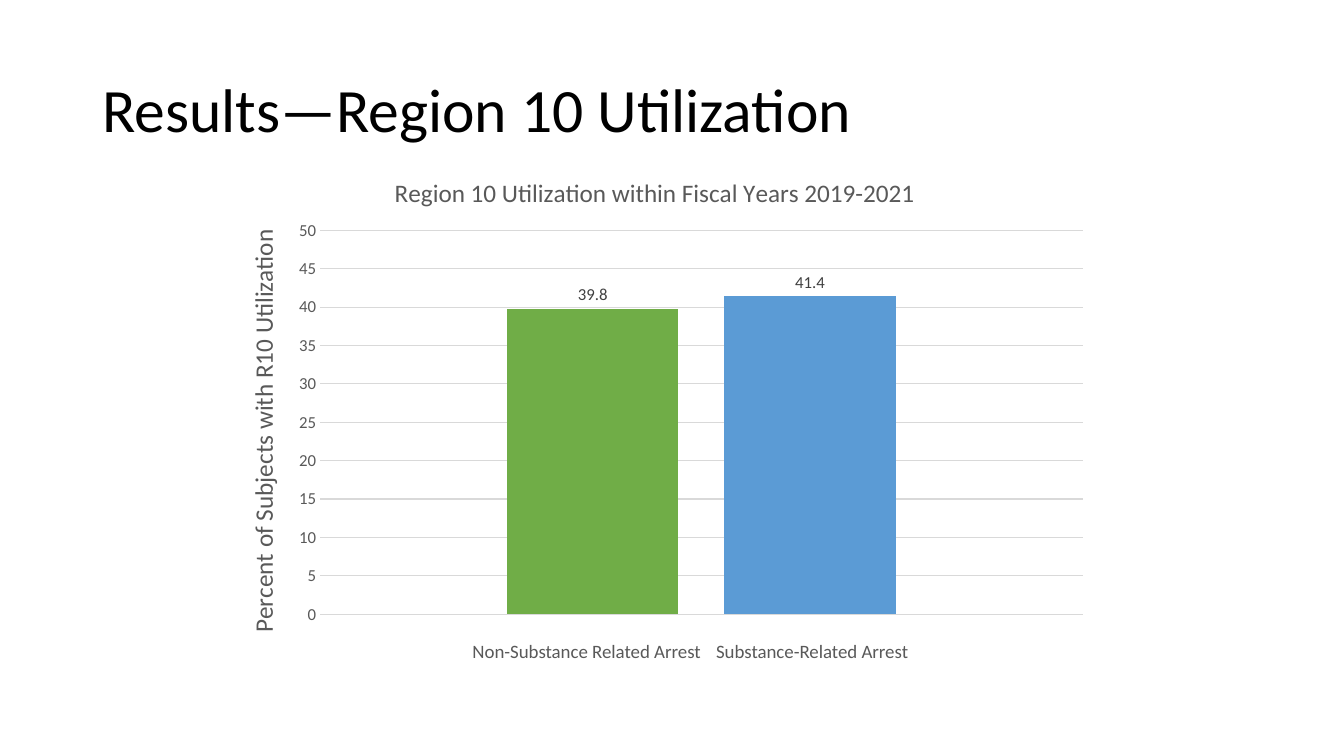
from dataclasses import dataclass

from lxml import etree
from pptx import Presentation
from pptx.chart.data import CategoryChartData
from pptx.dml.color import RGBColor
from pptx.enum.chart import XL_CHART_TYPE, XL_LABEL_POSITION, XL_TICK_MARK
from pptx.enum.text import MSO_ANCHOR, MSO_AUTO_SIZE, PP_ALIGN
from pptx.oxml.ns import qn
from pptx.util import Pt

COLUMNS = XL_CHART_TYPE.COLUMN_CLUSTERED
OUTSIDE_END = XL_LABEL_POSITION.OUTSIDE_END
NO_TICK = XL_TICK_MARK.NONE
MIDDLE = MSO_ANCHOR.MIDDLE
NO_AUTOFIT = MSO_AUTO_SIZE.NONE
LEFT = PP_ALIGN.LEFT
TITLE_ONLY = 5
PX = 9525


@dataclass(frozen=True)
class Theme:
    font: str = "Calibri"
    ink: str = "000000"
    muted: str = "595959"
    value: str = "404040"
    grid: str = "D9D9D9"
    heading_size: float = 44
    chart_title_size: float = 18
    caption_size: float = 13.5
    label_size: float = 12


THEME = Theme()
ARRESTS = [
    ("Non-Substance Related Arrest", 39.8, "70AD47", 237, 228),
    ("Substance-Related Arrest", 41.4, "5B9BD5", 469, 200),
]


def apply_format(target, values):
    for name, value in values.items():
        setattr(target, name, value)


def style_font(font, size, color):
    apply_format(font, {"name": THEME.font, "size": Pt(size), "bold": False})
    font.color.rgb = RGBColor.from_string(color)


def place(part, box):
    apply_format(part, dict(zip(("left", "top", "width", "height"), (n * PX for n in box))))


def set_layout(element, **positions):
    layout = element.find(qn("c:layout"))
    if layout is None:
        layout = etree.Element(qn("c:layout"))
        anchor = element.find(qn("c:tx"))
        if anchor is None:
            element.insert(0, layout)
        else:
            anchor.addnext(layout)
    for child in list(layout):
        layout.remove(child)
    manual = etree.SubElement(layout, qn("c:manualLayout"))
    for tag, value in positions.items():
        etree.SubElement(manual, qn(f"c:{tag}")).set("val", str(value))


def write_chart_title(title, wording, x, y):
    frame = title.text_frame
    frame.text = wording
    style_font(frame.paragraphs[0].runs[0].font, THEME.chart_title_size, THEME.muted)
    set_layout(title._element, xMode="edge", yMode="edge", x=x, y=y)


def add_heading(slide, box):
    heading = slide.shapes.title
    place(heading, box)
    frame = heading.text_frame
    frame.text = "Results—Region 10 Utilization"
    apply_format(frame, {"vertical_anchor": MIDDLE, "auto_size": NO_AUTOFIT, "word_wrap": True})
    paragraph = frame.paragraphs[0]
    apply_format(paragraph, {"alignment": LEFT, "line_spacing": 0.9})
    style_font(paragraph.runs[0].font, THEME.heading_size, THEME.ink)


def style_axes(chart):
    chart.category_axis.visible = False
    percent = chart.value_axis
    apply_format(percent, {
        "minimum_scale": 0, "maximum_scale": 50, "major_unit": 5,
        "major_tick_mark": NO_TICK, "minor_tick_mark": NO_TICK,
        "has_major_gridlines": True,
    })
    percent.format.line.fill.background()
    gridline = percent.major_gridlines.format.line
    gridline.width = Pt(0.75)
    gridline.color.rgb = RGBColor.from_string(THEME.grid)
    style_font(percent.tick_labels.font, THEME.label_size, THEME.muted)
    write_chart_title(percent.axis_title, "Percent of Subjects with R10 Utilization", 0.02, 0.15)


def add_utilization_chart(slide, box):
    utilization = CategoryChartData()
    utilization.categories = ["1"]
    for arrest, percent, *_ in ARRESTS:
        utilization.add_series(arrest, [percent])
    chart = slide.shapes.add_chart(COLUMNS, *(n * PX for n in box), utilization).chart
    style_font(chart.font, 10, THEME.ink)
    apply_format(chart, {"has_legend": False, "has_title": True})
    write_chart_title(chart.chart_title, "Region 10 Utilization within Fiscal Years 2019-2021", 0.19, 0.05)
    style_axes(chart)
    columns = chart.plots[0]
    apply_format(columns, {"gap_width": 219, "overlap": -27, "vary_by_categories": False})
    for series, (_, _, color, _, _) in zip(columns.series, ARRESTS):
        series.format.fill.solid()
        series.format.fill.fore_color.rgb = RGBColor.from_string(color)
        labels = series.data_labels
        apply_format(labels, {"show_value": True, "position": OUTSIDE_END})
        style_font(labels.font, THEME.label_size, THEME.value)
    plot_area = chart._chartSpace.chart.plotArea
    set_layout(plot_area, layoutTarget="inner", xMode="edge", yMode="edge",
               x=0.11, y=0.16, w=0.87, h=0.71)


def add_arrest_captions(slide, box):
    left, top, _, _ = box
    for arrest, _, _, offset, width in ARRESTS:
        caption_box = (left + offset, top + 468, width, 30)
        caption = slide.shapes.add_textbox(*(n * PX for n in caption_box))
        frame = caption.text_frame
        apply_format(frame, {
            "margin_left": 0, "margin_right": 0, "margin_top": 0, "margin_bottom": 0,
            "vertical_anchor": MIDDLE, "word_wrap": True, "text": arrest,
        })
        style_font(frame.paragraphs[0].runs[0].font, THEME.caption_size, THEME.muted)


def build_results_slide(deck):
    slide = deck.slides.add_slide(deck.slide_layouts[TITLE_ONLY])
    chart_box = (213, 137, 835, 515)
    add_heading(slide, (88, 38, 1104, 139))
    add_utilization_chart(slide, chart_box)
    add_arrest_captions(slide, chart_box)


def main():
    deck = Presentation()
    apply_format(deck, {"slide_width": 1280 * PX, "slide_height": 720 * PX})
    build_results_slide(deck)
    deck.save("out.pptx")


if __name__ == "__main__":
    main()
